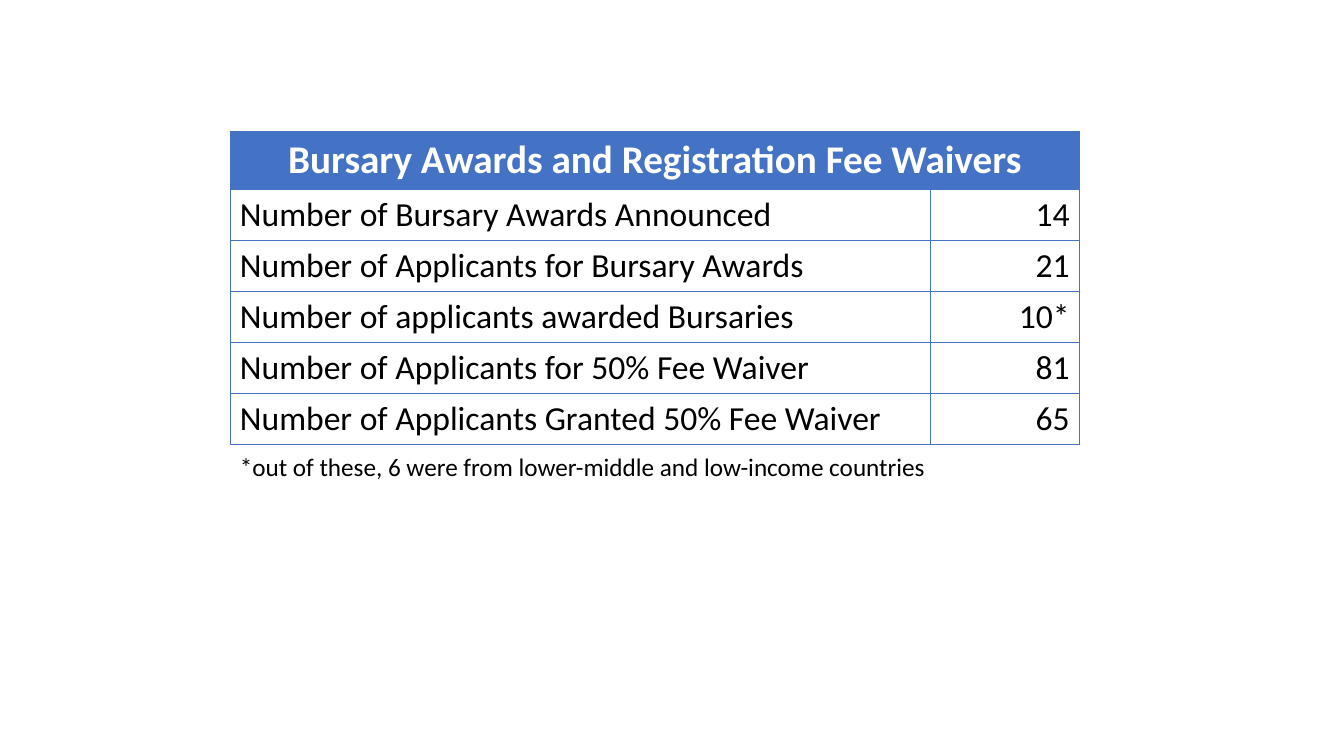
from lxml.etree import SubElement
from pptx import Presentation
from pptx.dml.color import RGBColor
from pptx.enum.text import PP_ALIGN
from pptx.oxml.ns import qn
from pptx.util import Pt

TITLE = "Bursary Awards and Registration Fee Waivers"
ROWS = [
    ("Number of Bursary Awards Announced", "14"),
    ("Number of Applicants for Bursary Awards", "21"),
    ("Number of applicants awarded Bursaries", "10*"),
    ("Number of Applicants for 50% Fee Waiver", "81"),
    ("Number of Applicants Granted 50% Fee Waiver", "65"),
]
NOTE = "*out of these, 6 were from lower-middle and low-income countries"

COLORS = {"blue": "4472C4", "white": "FFFFFF", "black": "000000"}
FONT = "Calibri"
LEFT, TOP = 164.2, 93.6
WIDTHS = (500.4, 106.6)
HEAD, ROW = 41.4, 36.5
NOTE_TOP, NOTE_HEIGHT = 319, 28.8


def write(frame, text, size=24, color="black", bold=False, align=PP_ALIGN.LEFT):
    para = frame.paragraphs[0]
    para.alignment = align
    run = para.add_run()
    run.text = text
    run.font.name = FONT
    run.font.size = Pt(size)
    run.font.bold = bold
    run.font.color.rgb = RGBColor.from_string(COLORS[color])


def outline(cell):
    """Draw thin blue borders; call before setting the cell's fill."""
    props = cell._tc.get_or_add_tcPr()
    for side in ("lnL", "lnR", "lnT", "lnB"):
        line = SubElement(props, qn(f"a:{side}"), w=str(Pt(0.5)))
        fill = SubElement(line, qn("a:solidFill"))
        SubElement(fill, qn("a:srgbClr"), val=COLORS["blue"])


def add_awards(slide):
    height = HEAD + ROW * len(ROWS)
    frame = slide.shapes.add_table(
        len(ROWS) + 1, len(WIDTHS), Pt(LEFT), Pt(TOP), Pt(sum(WIDTHS)), Pt(height)
    )
    table = frame.table
    table.horz_banding = False
    for column, width in zip(table.columns, WIDTHS):
        column.width = Pt(width)
    for index, row in enumerate(table.rows):
        row.height = Pt(ROW if index else HEAD)
        for cell in row.cells:
            outline(cell)
            if index:
                cell.fill.background()
            else:
                cell.fill.solid()
                cell.fill.fore_color.rgb = RGBColor.from_string(COLORS["blue"])

    title = table.cell(0, 0)
    title.merge(table.cell(0, 1))
    write(title.text_frame, TITLE, size=28, color="white", bold=True,
          align=PP_ALIGN.CENTER)
    for index, (label, count) in enumerate(ROWS, start=1):
        write(table.cell(index, 0).text_frame, label)
        write(table.cell(index, 1).text_frame, count, align=PP_ALIGN.RIGHT)


def add_note(slide):
    box = slide.shapes.add_textbox(
        Pt(LEFT), Pt(NOTE_TOP), Pt(sum(WIDTHS)), Pt(NOTE_HEIGHT)
    )
    box.text_frame.word_wrap = True
    write(box.text_frame, NOTE, size=18)


def main():
    deck = Presentation()
    deck.slide_width, deck.slide_height = Pt(960), Pt(540)
    slide = deck.slides.add_slide(deck.slide_layouts[6])
    add_awards(slide)
    add_note(slide)
    deck.save("out.pptx")


if __name__ == "__main__":
    main()
